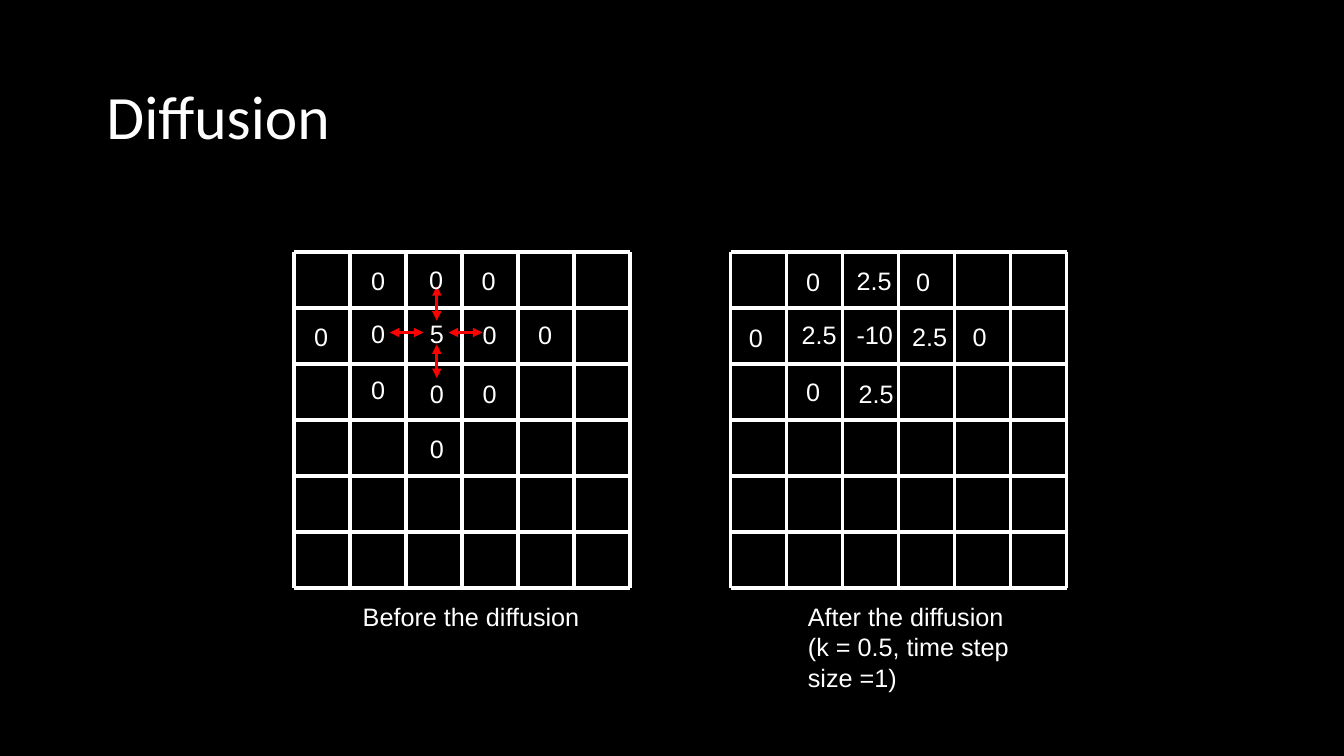
from dataclasses import dataclass

from lxml import etree
from pptx import Presentation
from pptx.dml.color import RGBColor
from pptx.enum.shapes import MSO_CONNECTOR
from pptx.enum.text import MSO_ANCHOR, MSO_AUTO_SIZE
from pptx.oxml.ns import qn
from pptx.shapes.connector import Connector
from pptx.shapes.shapetree import GroupShapes, SlideShapes
from pptx.util import Pt

STRAIGHT = MSO_CONNECTOR.STRAIGHT
MIDDLE = MSO_ANCHOR.MIDDLE
GROW = MSO_AUTO_SIZE.SHAPE_TO_FIT_TEXT
FIXED = MSO_AUTO_SIZE.NONE

WHITE, BLACK, RED = "FFFFFF", "000000", "FF0000"
CELL, COUNT, TOP = 40, 6, 180
SIDE = CELL * COUNT
HIGH = 28.8
WIDTHS = {"0": 24.5, "5": 24.5, "2.5": 39.6, "-10": 41}


@dataclass
class Label:
    text: str
    left: float
    top: float


@dataclass
class Line:
    x1: float
    y1: float
    x2: float
    y2: float


@dataclass
class Panel:
    left: float
    labels: list[Label]
    arrows: list[Line]


@dataclass
class Caption:
    text: str
    left: float
    width: float
    height: float


PANELS = [
    Panel(210, [
        Label("0", 258, 185.8), Label("0", 299.5, 185), Label("0", 337, 185.8),
        Label("0", 217.4, 226), Label("0", 258, 224), Label("5", 300, 224),
        Label("0", 337.7, 224.6), Label("0", 377.3, 224.6),
        Label("0", 258, 264.2), Label("0", 300, 266.4), Label("0", 337.7, 266.4),
        Label("0", 300, 306),
    ], [
        Line(312, 204.5, 312, 229), Line(312, 246, 312, 270),
        Line(302.5, 237.5, 278.5, 237.5), Line(344.5, 237.5, 320.5, 237.5),
    ]),
    Panel(522, [
        Label("0", 568.8, 186.5), Label("2.5", 604.8, 185.8), Label("0", 647.3, 186.5),
        Label("0", 527.8, 226.8), Label("2.5", 565.5, 224.6), Label("-10", 604.8, 224.6),
        Label("2.5", 644.4, 226), Label("0", 687.6, 226),
        Label("0", 568.8, 265), Label("2.5", 606.2, 267),
    ], []),
]

CAPTIONS = [
    Caption("Before the diffusion", 252, 240, HIGH),
    Caption("After the diffusion (k = 0.5, time step size =1)", 570, 168, 72.7),
]


def paint(code: str) -> RGBColor:
    return RGBColor.from_string(code)


def add_line(shapes: GroupShapes, line: Line, color: str) -> Connector:
    link = shapes.add_connector(
        STRAIGHT, Pt(line.x1), Pt(line.y1), Pt(line.x2), Pt(line.y2))
    link.line.color.rgb = paint(color)
    link.line.width = Pt(2.25)
    etree.SubElement(link._element.spPr, qn("a:effectLst"))
    return link


def add_arrow(shapes: GroupShapes, line: Line) -> None:
    stroke = add_line(shapes, line, RED).line._get_or_add_ln()
    for end in ("a:headEnd", "a:tailEnd"):
        etree.SubElement(stroke, qn(end), type="triangle")


def add_text(shapes: SlideShapes | GroupShapes, text: str, left: float, top: float,
             width: float, height: float, size: float = 18, font: str = "Arial",
             wrap: bool = True, title: bool = False) -> None:
    box = shapes.add_textbox(Pt(left), Pt(top), Pt(width), Pt(height))
    frame = box.text_frame
    frame.text = text
    frame.word_wrap = wrap
    frame.auto_size = FIXED if title else GROW
    first = frame.paragraphs[0]
    if title:
        frame.vertical_anchor = MIDDLE
        first.line_spacing = 0.9
    face = first.runs[0].font
    face.name = font
    face.size = Pt(size)
    face.color.rgb = paint(WHITE)


def add_grid(shapes: GroupShapes, left: float) -> None:
    for step in range(COUNT + 1):
        x, y = left + step * CELL, TOP + step * CELL
        add_line(shapes, Line(left, y, left + SIDE, y), WHITE)
        add_line(shapes, Line(x, TOP, x, TOP + SIDE), WHITE)


def add_panel(shapes: SlideShapes, panel: Panel) -> None:
    parts = shapes.add_group_shape().shapes
    add_grid(parts, panel.left)
    for arrow in panel.arrows:
        add_arrow(parts, arrow)
    for label in panel.labels:
        add_text(parts, label.text, label.left, label.top,
                 WIDTHS[label.text], HIGH, wrap=False)


def main() -> None:
    deck = Presentation()
    deck.slide_width, deck.slide_height = Pt(960), Pt(540)
    slide = deck.slides.add_slide(deck.slide_layouts[6])
    slide.background.fill.solid()
    slide.background.fill.fore_color.rgb = paint(BLACK)

    add_text(slide.shapes, "Diffusion", 69, 40.5, 864, 90,
             size=44, font="Calibri", title=True)
    for panel in PANELS:
        add_panel(slide.shapes, panel)
    for note in CAPTIONS:
        add_text(slide.shapes, note.text, note.left, 426, note.width, note.height)

    deck.save("out.pptx")


if __name__ == "__main__":
    main()
